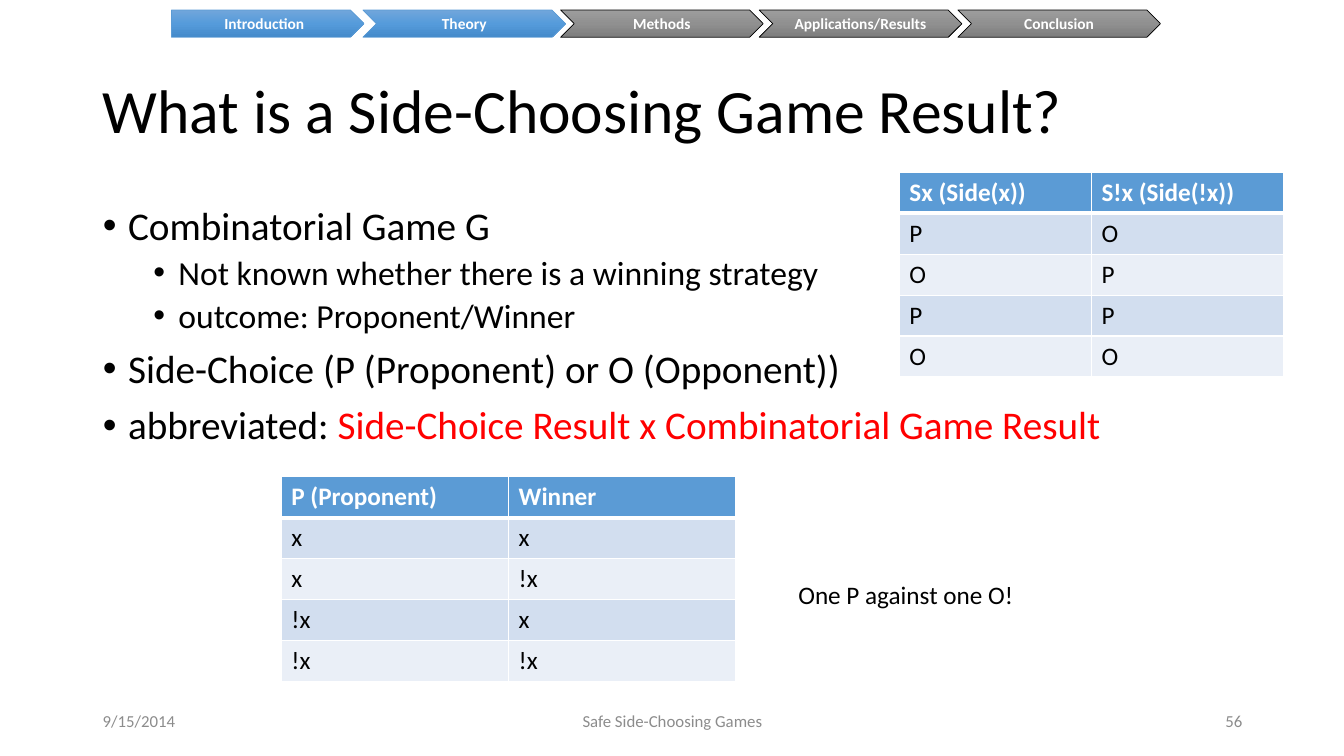
from copy import deepcopy

from lxml.etree import SubElement
from pptx import Presentation
from pptx.dml.color import RGBColor
from pptx.enum.shapes import MSO_SHAPE
from pptx.enum.text import MSO_ANCHOR, MSO_AUTO_SIZE, PP_ALIGN
from pptx.oxml import parse_xml
from pptx.oxml.ns import nsdecls, qn
from pptx.util import Emu, Pt

EMU_PER_PX = 9144  # 100 px to the inch
FONT = "Calibri"
BLACK, WHITE, RED, GREY = "000000", "FFFFFF", "FF0000", "8C8C8C"
HEADER_FILL, BAND_FILLS = "5B9BD5", ("D2DEEF", "EAEFF7")

# Gradient stops and outline of a progress step
VISITED = (("71A6DB", "559BDB", "448ACA"), "5B9BD5")
UPCOMING = (("9D9D9D", "909090", "7C7C7C"), BLACK)


def px(length):
    return Emu(length * EMU_PER_PX)


def color(hex_code):
    return RGBColor.from_string(hex_code)


def place(shape, left, top, width, height):
    shape.left, shape.top = px(left), px(top)
    shape.width, shape.height = px(width), px(height)


def add_run(paragraph, text, size, hex_code=BLACK, bold=False):
    run = paragraph.add_run()
    run.text = text
    run.font.name, run.font.size, run.font.bold = FONT, Pt(size), bold
    run.font.color.rgb = color(hex_code)


def add_title(slide, text):
    title = slide.shapes.title
    place(title, 92, 40, 1150, 145)
    frame = title.text_frame
    frame.auto_size = MSO_AUTO_SIZE.NONE
    frame.vertical_anchor = MSO_ANCHOR.MIDDLE
    heading = frame.paragraphs[0]
    heading.alignment, heading.line_spacing = PP_ALIGN.LEFT, 0.9
    add_run(heading, text, 44)


def add_bullets(slide, items):
    """Each item is a level and a list of (text, colour) runs."""
    body = slide.placeholders[1]
    place(body, 92, 200, 1150, 476)
    frame = body.text_frame
    frame.auto_size = MSO_AUTO_SIZE.NONE
    for number, (level, runs) in enumerate(items):
        point = frame.add_paragraph() if number else frame.paragraphs[0]
        point.level, point.line_spacing = level, 0.9
        point.space_before = Pt(5 if level else 10)
        properties = point._p.get_or_add_pPr()
        properties.set("marL", str(px(25 + 50 * level)))
        properties.set("indent", str(px(-25)))
        SubElement(properties, qn("a:buFont"), typeface="Arial")
        SubElement(properties, qn("a:buChar"), char="•")
        for text, hex_code in runs:
            add_run(point, text, 24 if level else 28, hex_code)


def set_borders(cell, top, bottom):
    properties = cell._tc.get_or_add_tcPr()
    widths = {"lnL": 1, "lnR": 1, "lnT": top, "lnB": bottom}
    for position, (side, width) in enumerate(widths.items()):
        properties.insert(position, parse_xml(
            f'<a:{side} {nsdecls("a")} w="{Pt(width)}"><a:solidFill>'
            f'<a:srgbClr val="{WHITE}"/></a:solidFill></a:{side}>'))


def add_banded_table(slide, rows, left, top, width, height):
    table = slide.shapes.add_table(
        len(rows), len(rows[0]), px(left), px(top), px(width), px(height)).table
    for r, row in enumerate(rows):
        is_header = r == 0
        for c, text in enumerate(row):
            cell = table.cell(r, c)
            cell.fill.solid()
            cell.fill.fore_color.rgb = color(
                HEADER_FILL if is_header else BAND_FILLS[(r - 1) % 2])
            set_borders(cell, top=3 if r == 1 else 1, bottom=3 if is_header else 1)
            add_run(cell.text_frame.paragraphs[0], text, 18,
                    WHITE if is_header else BLACK, is_header)


def fill_gradient(shape, hex_codes):
    """Fill from top to bottom with evenly spaced colours."""
    shape.fill.gradient()
    shape.fill.gradient_angle = 270
    stop_list = next(shape._element.iter(qn("a:gsLst")))
    while len(stop_list) < len(hex_codes):
        stop_list.append(deepcopy(stop_list[0]))
    for i, (stop, hex_code) in enumerate(zip(shape.fill.gradient_stops, hex_codes)):
        stop.position = i / (len(hex_codes) - 1)
        stop.color.rgb = color(hex_code)


def add_step(slide, label, outline, state, left, width):
    stops, line_color = state
    step = slide.shapes.add_shape(outline, px(left), px(10), px(width), px(27))
    step.shadow.inherit = False
    fill_gradient(step, stops)
    step.line.color.rgb = color(line_color)
    step.line.width = Pt(0.5)
    frame = step.text_frame
    frame.margin_left = frame.margin_right = 0
    frame.margin_top = frame.margin_bottom = 0
    frame.word_wrap = False
    frame.vertical_anchor = MSO_ANCHOR.MIDDLE
    frame.paragraphs[0].alignment = PP_ALIGN.CENTER
    add_run(frame.paragraphs[0], label, 11, WHITE, bold=True)


def add_progress_bar(slide):
    add_step(slide, "Introduction", MSO_SHAPE.PENTAGON, VISITED, 170, 191)
    later_steps = (("Theory", VISITED), ("Methods", UPCOMING),
                   ("Applications/Results", UPCOMING), ("Conclusion", UPCOMING))
    for i, (label, state) in enumerate(later_steps):
        add_step(slide, label, MSO_SHAPE.CHEVRON, state, 360 + 590 * i // 3, 201)


def add_label(slide, text, left, top, width, size, hex_code,
              align=PP_ALIGN.LEFT, anchor=MSO_ANCHOR.MIDDLE, wrap=True):
    label = slide.shapes.add_textbox(px(left), px(top), px(width), px(40))
    frame = label.text_frame
    frame.word_wrap, frame.vertical_anchor = wrap, anchor
    frame.paragraphs[0].alignment = align
    add_run(frame.paragraphs[0], text, size, hex_code)


def main():
    deck = Presentation()
    deck.slide_width, deck.slide_height = px(1333), px(750)
    slide = deck.slides.add_slide(deck.slide_layouts[1])

    # Title and main points
    add_title(slide, "What is a Side-Choosing Game Result?")
    add_bullets(slide, [
        (0, [("Combinatorial Game G", BLACK)]),
        (1, [("Not known whether there is a winning strategy", BLACK)]),
        (1, [("outcome: Proponent/Winner", BLACK)]),
        (0, [("Side-Choice (P (Proponent) or O (Opponent))", BLACK)]),
        (0, [("abbreviated: ", BLACK),
             ("Side-Choice Result x Combinatorial Game Result", RED)]),
    ])

    # Game results and side choices
    add_banded_table(slide, [("P (Proponent)", "Winner"), ("x", "x"), ("x", "!x"),
                             ("!x", "x"), ("!x", "!x")], 279, 473, 451, 203)
    add_banded_table(slide, [("Sx (Side(x))", "S!x (Side(!x))"), ("P", "O"),
                             ("O", "P"), ("P", "P"), ("O", "O")], 892, 171, 381, 203)
    add_label(slide, "One P against one O!", 782, 570, 236, 18, BLACK,
              anchor=MSO_ANCHOR.TOP, wrap=False)

    add_progress_bar(slide)

    # Footer
    add_label(slide, "9/15/2014", 92, 695, 300, 12, GREY)
    add_label(slide, "Safe Side-Choosing Games", 442, 695, 450, 12, GREY, PP_ALIGN.CENTER)
    add_label(slide, "56", 942, 695, 300, 12, GREY, PP_ALIGN.RIGHT)

    deck.save("out.pptx")


if __name__ == "__main__":
    main()
